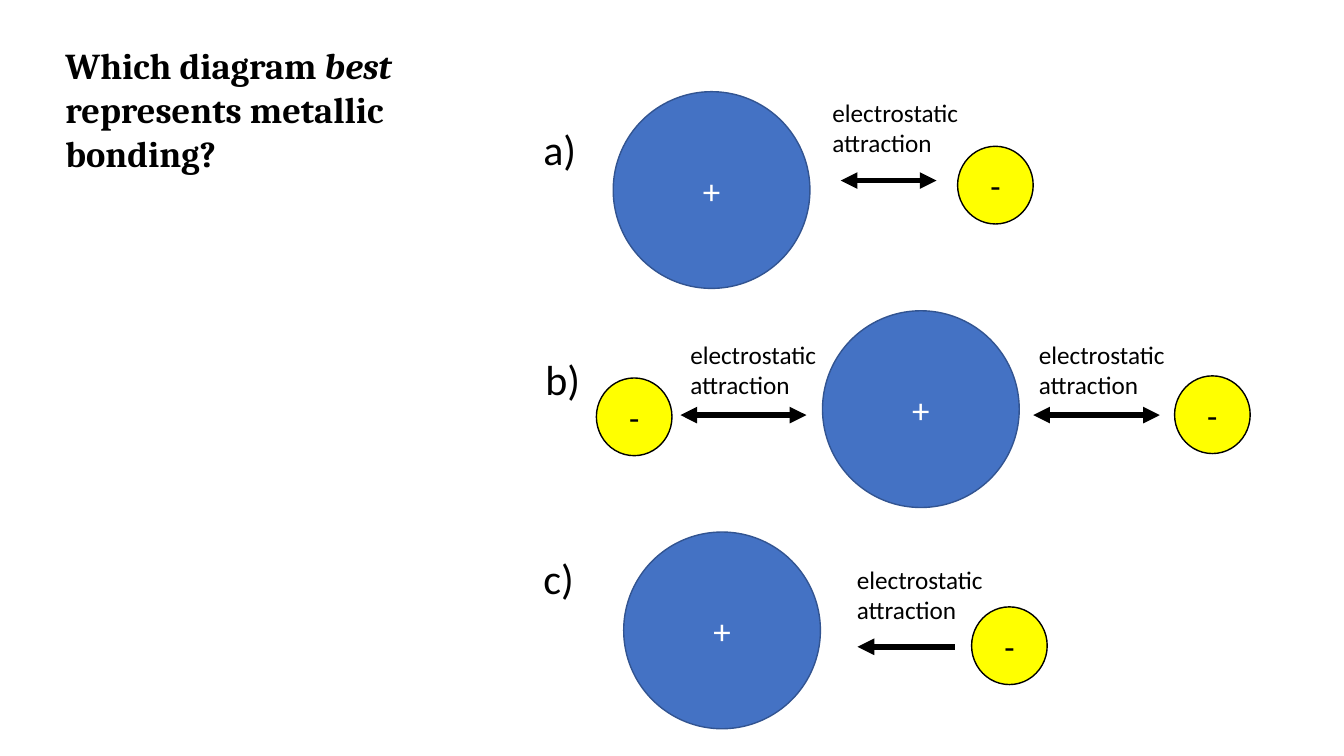
from lxml import etree
from pptx import Presentation
from pptx.dml.color import RGBColor
from pptx.enum.shapes import MSO_CONNECTOR, MSO_SHAPE
from pptx.enum.text import MSO_ANCHOR, MSO_AUTO_SIZE, PP_ALIGN
from pptx.oxml.ns import qn
from pptx.util import Pt

STRAIGHT = MSO_CONNECTOR.STRAIGHT
OVAL = MSO_SHAPE.OVAL
TOP, MIDDLE = MSO_ANCHOR.TOP, MSO_ANCHOR.MIDDLE
NO_AUTOFIT = MSO_AUTO_SIZE.NONE
LEFT, CENTER = PP_ALIGN.LEFT, PP_ALIGN.CENTER

NUCLEUS_SIZE = 140.5
ELECTRON_WIDTH, ELECTRON_HEIGHT = 54, 55.5

DIAGRAMS = [
    {
        "letter": ("a)", 381, 85),
        "nucleus": (438, 65.5),
        "electrons": [(684, 104.5)],
        "arrows": [(600.5, 669, 129, True)],
        "labels": [(587.5, 66)],
    },
    {
        "letter": ("b)", 382.5, 249),
        "nucleus": (587.5, 222),
        "electrons": [(426, 270), (839, 268.5)],
        "arrows": [(486, 576, 296.5, True), (738, 828.5, 296.5, True)],
        "labels": [(486, 238.5), (735, 238.5)],
    },
    {
        "letter": ("c)", 381, 391.5),
        "nucleus": (445.5, 380),
        "electrons": [(694, 433.5)],
        "arrows": [(612.5, 682, 462, False)],
        "labels": [(605, 399.5)],
    },
]


def color(hex_string):
    """Turn a hex string into a colour."""
    return RGBColor.from_string(hex_string)


class BondingSlide:
    """Hold the style and the current slide."""

    body_font = "Calibri"
    title_font = "Cambria"
    black, white = "000000", "FFFFFF"
    blue, dark_blue, yellow = "4472C4", "325491", "FFFF00"

    def __init__(self, presentation):
        """Add a title-only slide."""
        self.slide = presentation.slides.add_slide(presentation.slide_layouts[5])

    def add_runs(self, shape, runs, size, font, ink, anchor=TOP, alignment=LEFT):
        """Put (text, bold, italic) runs into a shape."""
        frame = shape.text_frame
        frame.word_wrap = True
        frame.auto_size = NO_AUTOFIT
        frame.vertical_anchor = anchor
        paragraph = frame.paragraphs[0]
        paragraph.alignment = alignment
        for text, bold, italic in runs:
            run = paragraph.add_run()
            run.text = text
            run.font.name = font
            run.font.size = Pt(size)
            run.font.bold = bold
            run.font.italic = italic
            run.font.color.rgb = color(ink)

    def title(self, runs, left, top, width, height):
        """Place and fill the title."""
        shape = self.slide.shapes.title
        shape.left, shape.top = Pt(left), Pt(top)
        shape.width, shape.height = Pt(width), Pt(height)
        self.add_runs(shape, runs, 26, self.title_font, self.black)

    def text(self, text, left, top, width, height, size):
        """Add a plain text box."""
        shape = self.slide.shapes.add_textbox(Pt(left), Pt(top), Pt(width), Pt(height))
        self.add_runs(shape, [(text, False, False)], size, self.body_font, self.black)

    def particle(self, sign, left, top, width, height, fill, outline, size, ink):
        """Add a charged circle with its sign."""
        shape = self.slide.shapes.add_shape(OVAL, Pt(left), Pt(top), Pt(width), Pt(height))
        shape.shadow.inherit = False
        shape.fill.solid()
        shape.fill.fore_color.rgb = color(fill)
        shape.line.color.rgb = color(outline)
        shape.line.width = Pt(1)
        self.add_runs(shape, [(sign, False, False)], size, self.body_font, ink, MIDDLE, CENTER)

    def nucleus(self, left, top):
        """Add a large positive ion."""
        self.particle("+", left, top, NUCLEUS_SIZE, NUCLEUS_SIZE,
                      self.blue, self.dark_blue, 25, self.white)

    def electron(self, left, top):
        """Add a small negative electron."""
        self.particle("-", left, top, ELECTRON_WIDTH, ELECTRON_HEIGHT,
                      self.yellow, self.black, 24, self.black)

    def arrow(self, start, end, y, two_way):
        """Add a horizontal arrow pointing left, or both ways."""
        connector = self.slide.shapes.add_connector(STRAIGHT, Pt(start), Pt(y), Pt(end), Pt(y))
        connector.line.color.rgb = color(self.black)
        connector.line.width = Pt(4)
        properties = connector._element.spPr
        line = properties.find(qn("a:ln"))
        for tag in ("a:headEnd", "a:tailEnd") if two_way else ("a:headEnd",):
            etree.SubElement(line, qn(tag), type="triangle")
        etree.SubElement(properties, qn("a:effectLst"))

    def diagram(self, letter, nucleus, electrons, arrows, labels):
        """Add one lettered answer diagram."""
        self.text(*letter, 84, 44, 30)
        self.nucleus(*nucleus)
        for position in electrons:
            self.electron(*position)
        for arrow in arrows:
            self.arrow(*arrow)
        for position in labels:
            self.text("electrostatic attraction", *position, 141, 51, 18)


def main():
    """Build and save the slide."""
    presentation = Presentation()
    presentation.slide_width, presentation.slide_height = Pt(960), Pt(540)
    page = BondingSlide(presentation)
    page.title([("Which diagram ", True, False), ("best ", True, True),
                ("represents metallic bonding?", True, False)], 39.5, 27.5, 293, 101.5)
    for diagram in DIAGRAMS:
        page.diagram(**diagram)
    presentation.save("out.pptx")


if __name__ == "__main__":
    main()
